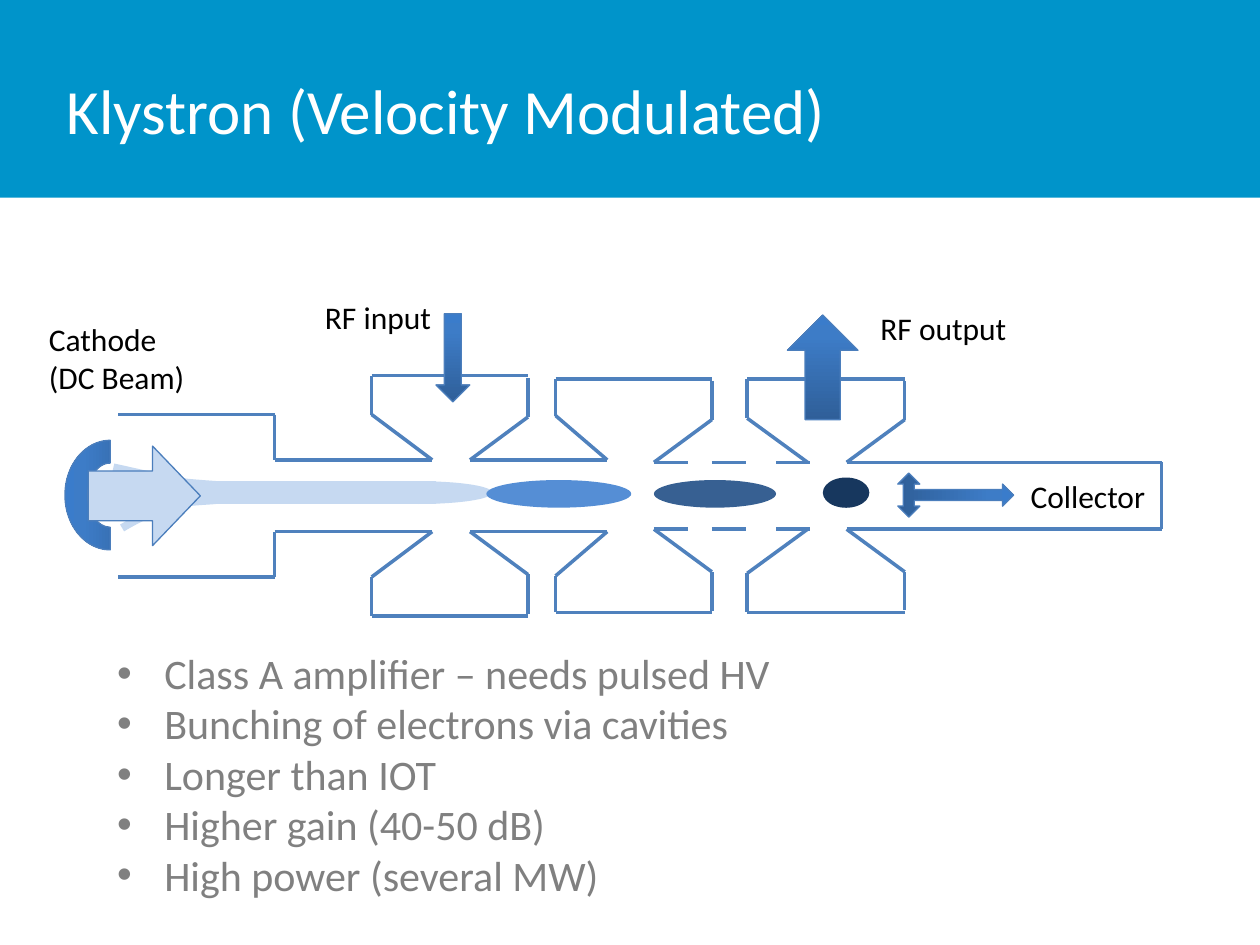
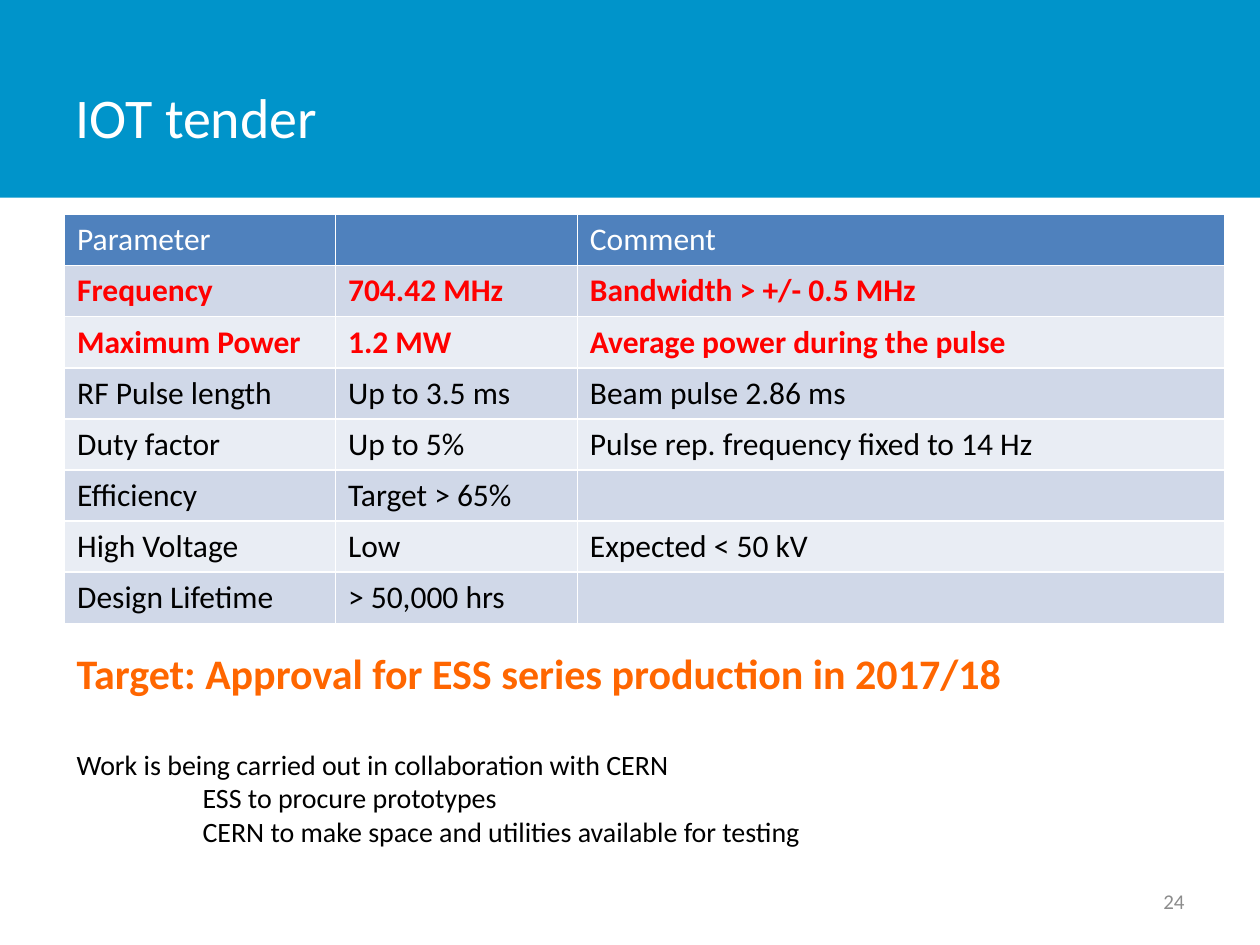
from copy import deepcopy
from itertools import pairwise

from lxml import etree
from pptx import Presentation
from pptx.dml.color import RGBColor
from pptx.enum import shapes as sh, text as tx
from pptx.oxml.ns import qn
from pptx.util import Pt

FONT = "Calibri"
BAND = RGBColor(0x00, 0x94, 0xCA)
WHITE = RGBColor(0xFF, 0xFF, 0xFF)
BLACK = RGBColor(0x00, 0x00, 0x00)
GREY = RGBColor(0x80, 0x80, 0x80)
PAGE_GREY = RGBColor(0x8C, 0x8C, 0x8C)
RED = RGBColor(0xFF, 0x00, 0x00)
ORANGE = RGBColor(0xFF, 0x66, 0x00)
WALL = RGBColor(0x4F, 0x81, 0xBD)
EDGE = RGBColor(0x4B, 0x7E, 0xBC)
BEAM = RGBColor(0xC6, 0xD9, 0xF1)
BUNCH_1 = RGBColor(0x55, 0x8E, 0xD5)
BUNCH_2 = RGBColor(0x37, 0x60, 0x92)
BUNCH_3 = RGBColor(0x17, 0x37, 0x5E)
ROW_DARK = RGBColor(0xD0, 0xD8, 0xE8)
ROW_LIGHT = RGBColor(0xE9, 0xED, 0xF4)
SHADES = [(0, RGBColor(0x2F, 0x5F, 0x99)), (0.8, RGBColor(0x3D, 0x7C, 0xC7)),
          (1, RGBColor(0x3A, 0x7C, 0xCB))]


def write(frame, text, size=18, color=BLACK, bold=False, align=None, anchor=None,
          bullet_indent=0):
    """Fill a text frame, one paragraph for each line of text."""
    frame.word_wrap = True
    if anchor is not None:
        frame.vertical_anchor = anchor
    for i, line in enumerate(text.split("\n")):
        par = frame.paragraphs[0] if i == 0 else frame.add_paragraph()
        if bullet_indent:
            props = par._p.get_or_add_pPr()
            props.set("marL", str(Pt(bullet_indent)))
            props.set("indent", str(-Pt(bullet_indent)))
            etree.SubElement(props, qn("a:buFont")).set("typeface", "Arial")
            etree.SubElement(props, qn("a:buChar")).set("char", "•")
        if align is not None:
            par.alignment = align
        run = par.add_run()
        run.text = line
        run.font.name, run.font.size = FONT, Pt(size)
        run.font.bold, run.font.color.rgb = bold, color


def add_part(slide, kind, place, fill=None, edge=None, turn=0):
    """Add a preset shape; without a fill colour it gets the blue gradient."""
    part = slide.shapes.add_shape(kind, *map(Pt, place))
    part.shadow.inherit = False
    part.rotation = turn
    if fill is not None:
        part.fill.solid()
        part.fill.fore_color.rgb = fill
    else:
        part.fill.gradient()
        part.fill.gradient_angle = 90
        stop_list = part._element.spPr.find(".//" + qn("a:gsLst"))
        stop_list.append(deepcopy(stop_list[1]))
        for stop, (position, shade) in zip(part.fill.gradient_stops, SHADES):
            stop.position, stop.color.rgb = position, shade
    if edge is None:
        part.line.fill.background()
    else:
        part.line.color.rgb, part.line.width = edge, Pt(0.75)
    return part


prs = Presentation()
prs.slide_width, prs.slide_height = Pt(720), Pt(540)
MSO = sh.MSO_SHAPE
MIDDLE = tx.MSO_ANCHOR.MIDDLE

# Band and title of both slides
titles = [("Klystron (Velocity Modulated)", 36, (31, 37.4, 550, 51), None),
          ("IOT tender", 32, (36, 21.6, 562.3, 90), MIDDLE)]
for title, size, place, anchor in titles:
    slide = prs.slides.add_slide(prs.slide_layouts[6])
    add_part(slide, MSO.RECTANGLE, (0, 0, 720, 113), BAND)
    write(slide.shapes.add_textbox(*map(Pt, place)).text_frame, title,
          size=size, color=WHITE, anchor=anchor)
klystron, tender = prs.slides

# Klystron: labels
labels = [("RF output", (496, 172.8, 94.3, 28.8)),
          ("RF input", (178.6, 167, 83.5, 28.8)),
          ("Collector", (581.8, 269.3, 86.4, 28.8)),
          ("Cathode\n(DC Beam)", (20.9, 179.3, 141, 51))]
for label, place in labels:
    write(klystron.shapes.add_textbox(*map(Pt, place)).text_frame, label)

# Klystron: tube walls, upper half and its mirror about the beam axis
AXIS = 283.3
upper_walls = [
    [(67.7, 236.9), (157, 236.9), (157, 262.8), (247, 262.8), (212.4, 236.9),
     (212.4, 214.6), (301.7, 214.6)],
    [(301.7, 216), (301.7, 238.3), (268.6, 262.8), (347, 262.8), (317.5, 237.5),
     (317.5, 216.7), (406.8, 216.7)],
    [(406.8, 217.6), (406.8, 239.8), (373.7, 264.2), (393.1, 264.2)],
    [(406.8, 264.2), (426.2, 264.2)],
    [(443.5, 264.2), (463, 264.2)],
    [(461.5, 264.2), (427, 239), (427, 216.7), (517, 216.7)],
    [(517, 218), (517, 239.8), (483.8, 264.2), (663.8, 264.2), (663.8, AXIS)],
]
for side in (1, -1):
    for wall in upper_walls:
        for (x1, y1), (x2, y2) in pairwise(wall):
            segment = klystron.shapes.add_connector(
                sh.MSO_CONNECTOR.STRAIGHT,
                Pt(x1), Pt(AXIS + side * (y1 - AXIS)),
                Pt(x2), Pt(AXIS + side * (y2 - AXIS)))
            segment.line.color.rgb, segment.line.width = WALL, Pt(2)
            etree.SubElement(segment._element.spPr, qn("a:effectLst"))

# Klystron: RF arrows
add_part(klystron, MSO.DOWN_ARROW, (249.1, 179.3, 19.4, 50.4), edge=EDGE)
add_part(klystron, MSO.UP_ARROW, (450, 180, 40.3, 59.8), edge=EDGE)

# Klystron: beam outline near the cathode, sampled from cubic curves
STEPS = 8
beam_curves = [
    [(64.8, 267.1), (78.5, 270), (92.2, 273.6), (106.6, 275.8),
     (121, 277.2), (135.4, 277.9), (149.8, 278.6)],
    [(69.8, 301.7), (78.5, 296.6), (87.1, 292.3), (95.8, 289.4),
     (104.4, 286.6), (113.8, 286.6), (123.1, 285.8)],
]
for curve in beam_curves:
    points = []
    for first in range(0, len(curve) - 1, 3):
        for step in range(1, STEPS + 1):
            t = step / STEPS
            weights = ((1 - t) ** 3, 3 * t * (1 - t) ** 2, 3 * t * t * (1 - t), t ** 3)
            points.append([Pt(sum(w * c for w, c in zip(weights, coords)))
                           for coords in zip(*curve[first:first + 4])])
    builder = klystron.shapes.build_freeform(*map(Pt, curve[0]))
    builder.add_line_segments(points, close=False)
    outline = builder.convert_to_shape()
    outline.shadow.inherit = False
    outline.fill.background()
    outline.line.color.rgb, outline.line.width = BEAM, Pt(4.5)

# Klystron: beam tip and electron bunches
for place, color in [((197.3, 275, 84.2, 13), BEAM),
                     ((277.9, 274.3, 82.8, 15.8), BUNCH_1),
                     ((373.7, 274.3, 69.8, 15.8), BUNCH_2),
                     ((470.2, 272.9, 26.6, 17.3), BUNCH_3)]:
    add_part(klystron, MSO.OVAL, place, color)

# Klystron: cathode, collector spread and beam
add_part(klystron, MSO.BLOCK_ARC, (31.7, 257, 62.6, 51.8), edge=EDGE, turn=270)
add_part(klystron, MSO.LEFT_RIGHT_UP_ARROW, (533.5, 249.8, 25.2, 66.2), edge=EDGE, turn=90)
add_part(klystron, MSO.RECTANGLE, (106.6, 275, 142.6, 13), BEAM)
emission = add_part(klystron, MSO.RIGHT_ARROW, (50.4, 254.9, 64.1, 56.9), BEAM, EDGE)
emission.adjustments[1] = 0.48

# Klystron: properties
properties = klystron.shapes.add_textbox(Pt(59.8), Pt(366.5), Pt(447.8), Pt(152.6))
write(properties.text_frame,
      "Class A amplifier – needs pulsed HV\n"
      "Bunching of electrons via cavities\n"
      "Longer than IOT\n"
      "Higher gain (40-50 dB)\n"
      "High power (several MW)",
      size=24, color=GREY, bullet_indent=27)

# Tender: parameter table
parameters = [
    ("Parameter", "", "Comment"),
    ("Frequency", "704.42 MHz", "Bandwidth > +/- 0.5 MHz"),
    ("Maximum Power", "1.2 MW", "Average power during the pulse"),
    ("RF Pulse length", "Up to 3.5 ms", "Beam pulse 2.86 ms"),
    ("Duty factor", "Up to 5%", "Pulse rep. frequency fixed to 14 Hz"),
    ("Efficiency", "Target > 65%", ""),
    ("High Voltage", "Low", "Expected < 50 kV"),
    ("Design Lifetime", "> 50,000 hrs", ""),
]
KEY_ROWS = (1, 2)
grid = tender.shapes.add_table(len(parameters), 3, Pt(36.9), Pt(122.6),
                               Pt(663), Pt(233.6)).table
for column, width in zip(grid.columns, (154.8, 138.2, 370)):
    column.width = Pt(width)
for r, row in enumerate(parameters):
    grid.rows[r].height = Pt(29.2)
    fill = WALL if r == 0 else ROW_DARK if r % 2 else ROW_LIGHT
    color = WHITE if r == 0 else RED if r in KEY_ROWS else BLACK
    for c, entry in enumerate(row):
        cell = grid.cell(r, c)
        cell.fill.solid()
        cell.fill.fore_color.rgb = fill
        if entry:
            write(cell.text_frame, entry, color=color, bold=r in KEY_ROWS)

# Tender: target, collaboration and page number
target = tender.shapes.add_textbox(Pt(36.7), Pt(366.5), Pt(633), Pt(36))
write(target.text_frame, "Target: Approval for ESS series production in 2017/18",
      size=24, color=ORANGE, bold=True)
collaboration = tender.shapes.add_textbox(Pt(36.7), Pt(423.4), Pt(436), Pt(65.5))
write(collaboration.text_frame,
      "Work is being carried out in collaboration with CERN\n"
      "ESS to procure prototypes\n"
      "CERN to make space and utilities available for testing", size=16)
for task in collaboration.text_frame.paragraphs[1:]:
    task._p.get_or_add_pPr().set("marL", str(Pt(72)))
page = tender.shapes.add_textbox(Pt(516.2), Pt(500.4), Pt(167.8), Pt(28.8))
write(page.text_frame, "24", size=12, color=PAGE_GREY,
      align=tx.PP_ALIGN.RIGHT, anchor=MIDDLE)

prs.save("out.pptx")
